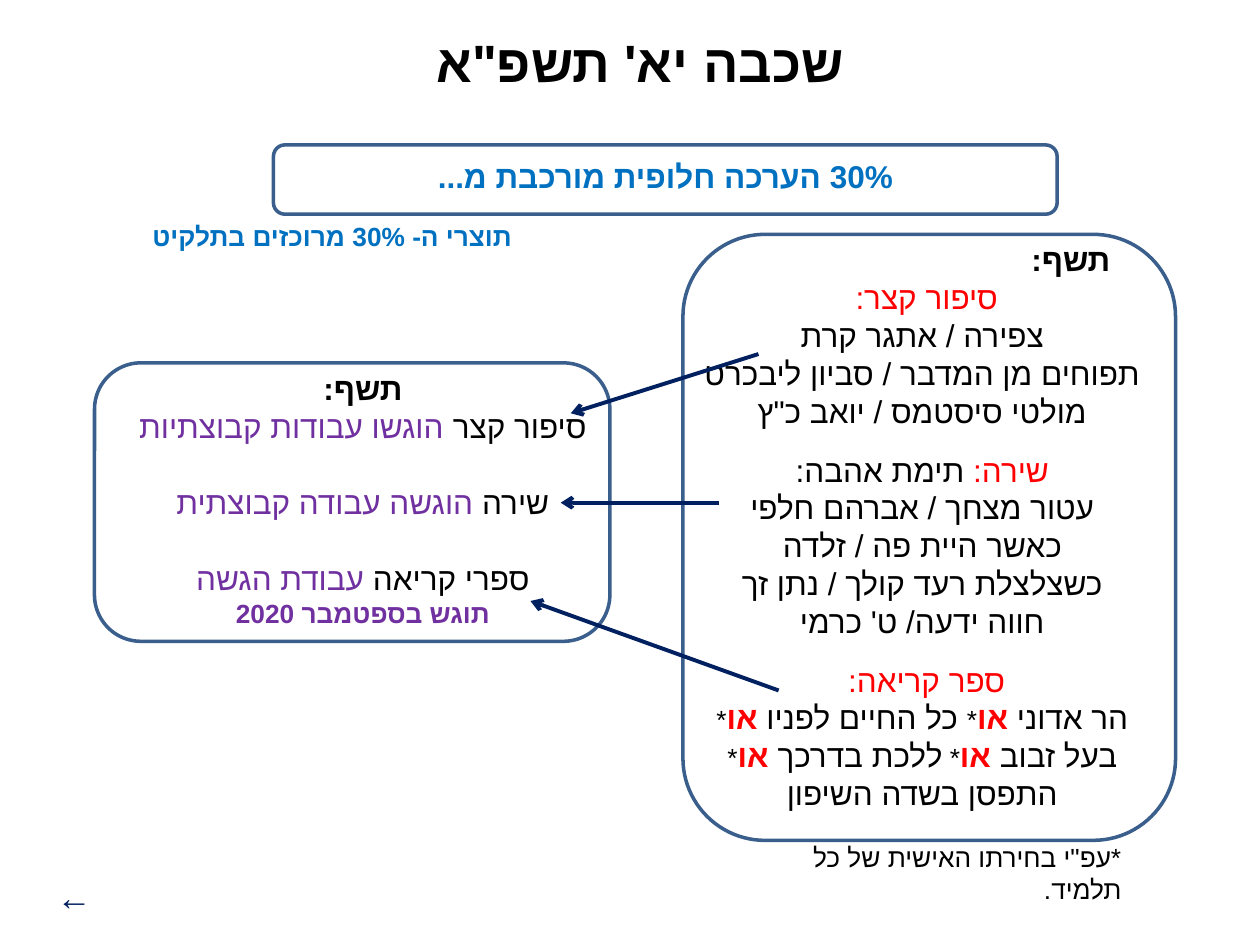
from pptx import Presentation
from pptx.dml.color import RGBColor
from pptx.enum import shapes, text
from pptx.oxml import ns, xmlchemy
from pptx.util import Inches, Pt

BLACK = RGBColor(0x00, 0x00, 0x00)
RED = RGBColor(0xFF, 0x00, 0x00)
BLUE = RGBColor(0x00, 0x70, 0xC0)
NAVY = RGBColor(0x00, 0x20, 0x60)
STEEL = RGBColor(0x3A, 0x5F, 0x8C)
PURPLE = RGBColor(0x70, 0x30, 0xA0)
CENTER = text.PP_ALIGN.CENTER
RIGHT = text.PP_ALIGN.RIGHT
LEFT = text.PP_ALIGN.LEFT
TOP = text.MSO_ANCHOR.TOP
MIDDLE = text.MSO_ANCHOR.MIDDLE


def element(parent, tag, **attrs):
    child = xmlchemy.OxmlElement(tag)
    for name, value in attrs.items():
        child.set(name, value)
    parent.append(child)


def add_run(para, words, size, color, bold):
    run = para.add_run()
    run.text = words
    font = run.font
    font.name = "Calibri"
    font.size = Pt(size)
    font.bold = bold
    font.color.rgb = color
    element(run._r.get_or_add_rPr(), "a:cs", typeface="Arial")


def add_text(slide, box, lines, size=18, color=BLACK, bold=False,
             align=CENTER, anchor=TOP, gaps=()):
    frame = slide.shapes.add_textbox(*map(Inches, box)).text_frame
    frame.word_wrap = True
    frame.vertical_anchor = anchor
    for i, line in enumerate(lines):
        para = frame.paragraphs[0] if i == 0 else frame.add_paragraph()
        para.alignment = align
        para._p.get_or_add_pPr().set("rtl", "1")
        if i in dict(gaps):
            para.space_before = Pt(dict(gaps)[i])
        for part in [line] if isinstance(line, str) else line:
            words, style = (part, {}) if isinstance(part, str) else part
            add_run(para, words, **{"size": size, "color": color, "bold": bold, **style})


def add_frame(slide, box):
    shape = slide.shapes.add_shape(shapes.MSO_SHAPE.ROUNDED_RECTANGLE, *map(Inches, box))
    shape.shadow.inherit = False
    shape.fill.background()
    shape.line.color.rgb = STEEL
    shape.line.width = Pt(2)


def add_arrow(slide, start, end):
    arrow = slide.shapes.add_connector(
        shapes.MSO_CONNECTOR.STRAIGHT, *map(Inches, start + end))
    arrow.line.color.rgb = NAVY
    arrow.line.width = Pt(2.25)
    element(arrow.line._get_or_add_ln(), "a:tailEnd", type="arrow")
    element(arrow._element.find(ns.qn("p:spPr")), "a:effectLst")


def add_banner(slide, box):
    x, y, w, h = box
    add_frame(slide, box)
    add_text(slide, (x, y + 0.05, w, 0.4), ["30% הערכה חלופית מורכבת מ..."],
             color=BLUE, bold=True)


def add_works(slide, box):
    x, y, w, h = box
    red = {"color": RED}
    pick = ("או", {"color": RED, "bold": True})
    star = ("*", {"size": 15})
    add_frame(slide, box)
    add_text(slide, (x + 2, y, 1.49, 0.4), ["תשף:"], bold=True, align=RIGHT)
    add_text(slide, (x - 0.11, y + 0.3, w + 0.11, h - 0.43), [
        [("סיפור קצר: ", red)],
        "צפירה / אתגר קרת",
        "תפוחים מן המדבר / סביון ליבכרט",
        "מולטי סיסטמס / יואב כ\"ץ",
        [("שירה: ", red), "תימת אהבה:"],
        "עטור מצחך / אברהם חלפי",
        "כאשר היית פה / זלדה",
        "כשצלצלת רעד קולך / נתן זך",
        "חווה ידעה/ ט' כרמי",
        [("ספר קריאה: ", red)],
        ["הר אדוני ", pick, star, " כל החיים לפניו ", pick, star],
        ["בעל זבוב ", pick, ("* ", {"size": 15}), "ללכת בדרכך ", pick, star],
        "התפסן בשדה השיפון",
    ], gaps={4: 12, 9: 12})


def add_tasks(slide, box):
    x, y, w, h = box
    hue = {"color": PURPLE}
    add_frame(slide, box)
    add_text(slide, (x + 0.16, y, w - 0.15, h - 0.04), [
        [("תשף:", {"bold": True})],
        ["סיפור קצר ", ("הוגשו עבודות קבוצתיות", hue)],
        ["שירה ", ("הוגשה עבודה קבוצתית", hue)],
        ["ספרי קריאה ", ("עבודת הגשה", hue)],
        [("תוגש בספטמבר 2020", {"size": 15, "bold": True, **hue})],
    ], gaps={2: 22, 3: 22})


def main():
    deck = Presentation()
    deck.slide_width, deck.slide_height = Inches(10), Inches(7.5)
    slide = deck.slides.add_slide(deck.slide_layouts[6])
    add_text(slide, (0.35, 6.9, 0.79, 0.44), ["←"], size=20, color=NAVY,
             bold=True, align=LEFT)
    add_text(slide, (0.83, 0.29, 8.5, 0.39), ["שכבה יא' תשפ\"א"], size=30,
             bold=True, anchor=MIDDLE)
    add_works(slide, (5.42, 1.86, 3.91, 4.81))
    add_banner(slide, (2.17, 1.15, 6.22, 0.55))
    add_tasks(slide, (0.75, 2.88, 4.09, 2.21))
    add_text(slide, (5.71, 6.63, 3.29, 0.35), ["*עפ\"י בחירתו האישית של כל תלמיד."],
             size=15, align=RIGHT)
    add_text(slide, (0.59, 1.7, 4.09, 0.35), ["תוצרי ה- 30% מרוכזים בתלקיט"],
             size=15, color=BLUE, bold=True)
    for start, end in [((6.18, 5.48), (4.21, 4.77)),
                       ((6.02, 2.81), (4.53, 3.28)),
                       ((5.71, 3.99), (4.45, 3.99))]:
        add_arrow(slide, start, end)
    deck.save("out.pptx")


if __name__ == "__main__":
    main()
